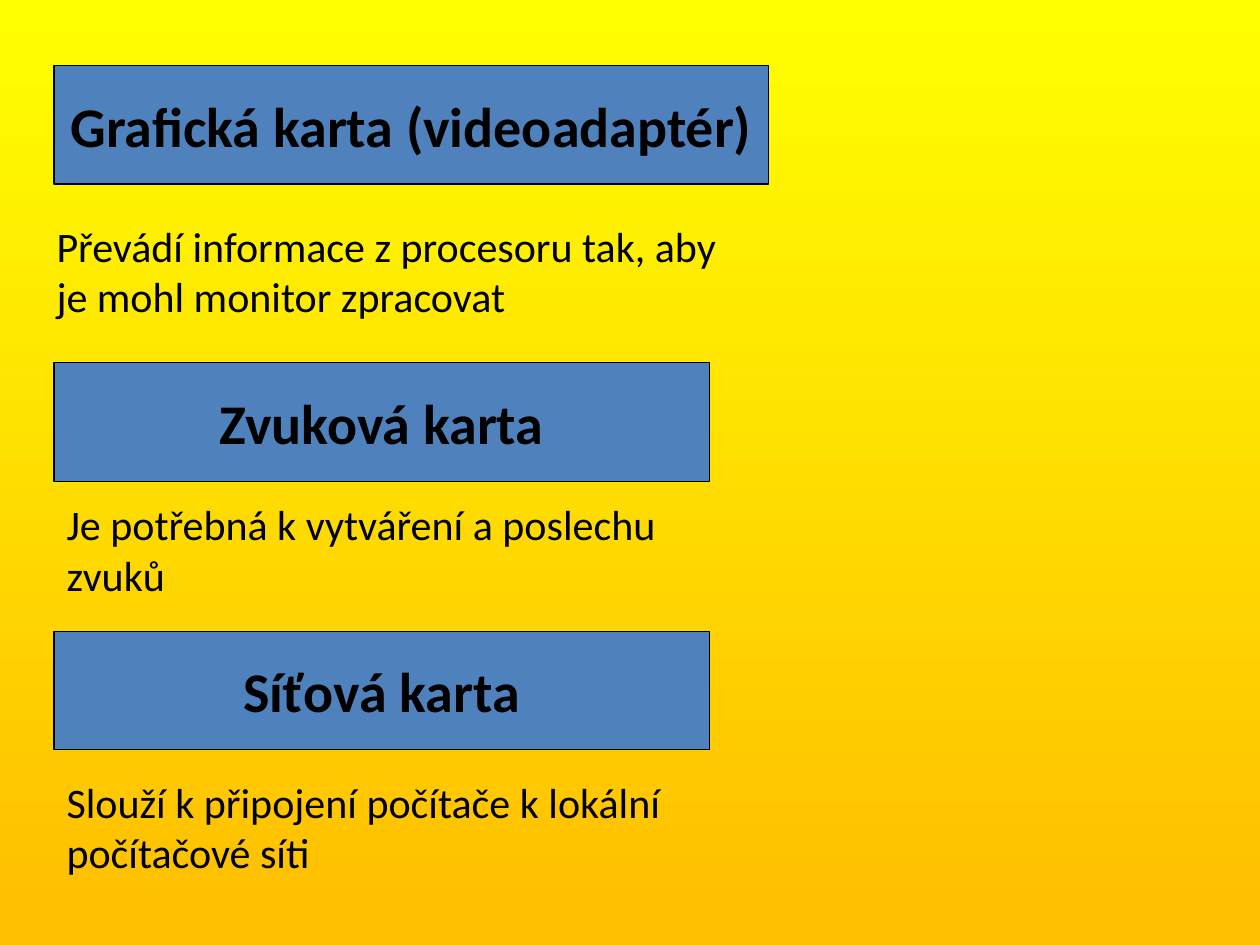
import pptx
import pptx.dml.color
import pptx.enum.shapes
import pptx.enum.text
import pptx.util

Inches = pptx.util.Inches
Pt = pptx.util.Pt
Color = pptx.dml.color.RGBColor.from_string

THEME = {
    "font": "Calibri",
    "text": "000000",
    "card": "4F81BD",
    "gradient": [(0, "FFFF00"), (0.97, "FFC000")],
    "heading_size": 32,
    "body_size": 24,
    "line_width": 0.75,
}

LEFT = 0.43
HEADING_HEIGHT = 0.94
BODY_HEIGHT = 0.91

CARDS = [
    {
        "heading": "Grafická karta (videoadaptér)",
        "heading_top": 0.52,
        "heading_width": 5.67,
        "body": "Převádí informace z procesoru tak, aby je mohl monitor zpracovat",
        "body_box": (0.35, 1.7, 5.59),
    },
    {
        "heading": "Zvuková karta",
        "heading_top": 2.88,
        "heading_width": 5.2,
        "body": "Je potřebná k vytváření a poslechu zvuků",
        "body_box": (LEFT, 3.91, 5.28),
    },
    {
        "heading": "Síťová karta",
        "heading_top": 5.01,
        "heading_width": 5.2,
        "body": "Slouží k připojení počítače k lokální počítačové síti",
        "body_box": (LEFT, 6.11, 5.67),
    },
]


def paint_background(page):
    fill = page.background.fill
    fill.gradient()
    fill.gradient_angle = 270
    for stop, (position, color) in zip(fill.gradient_stops, THEME["gradient"]):
        stop.position = position
        stop.color.rgb = Color(color)


def write(box, text, size, bold, alignment):
    para = box.text_frame.paragraphs[0]
    para.text = text
    para.alignment = alignment
    para.font.name = THEME["font"]
    para.font.size = Pt(size)
    para.font.bold = bold
    para.font.color.rgb = Color(THEME["text"])


def add_heading(page, card):
    box = page.shapes.add_shape(
        pptx.enum.shapes.MSO_SHAPE.RECTANGLE,
        Inches(LEFT), Inches(card["heading_top"]),
        Inches(card["heading_width"]), Inches(HEADING_HEIGHT),
    )
    box.shadow.inherit = False
    box.fill.solid()
    box.fill.fore_color.rgb = Color(THEME["card"])
    box.line.color.rgb = Color(THEME["text"])
    box.line.width = Pt(THEME["line_width"])
    box.text_frame.word_wrap = False
    box.text_frame.vertical_anchor = pptx.enum.text.MSO_ANCHOR.MIDDLE
    write(box, card["heading"], THEME["heading_size"], True,
          pptx.enum.text.PP_ALIGN.CENTER)


def add_body(page, card):
    left, top, width = card["body_box"]
    box = page.shapes.add_textbox(
        Inches(left), Inches(top), Inches(width), Inches(BODY_HEIGHT)
    )
    box.text_frame.word_wrap = True
    box.text_frame.auto_size = pptx.enum.text.MSO_AUTO_SIZE.SHAPE_TO_FIT_TEXT
    write(box, card["body"], THEME["body_size"], False,
          pptx.enum.text.PP_ALIGN.LEFT)


def main():
    deck = pptx.Presentation()
    deck.slide_width = Inches(10)
    deck.slide_height = Inches(7.5)
    page = deck.slides.add_slide(deck.slide_layouts[6])
    paint_background(page)
    for card in CARDS:
        add_heading(page, card)
        add_body(page, card)
    deck.save("out.pptx")


if __name__ == "__main__":
    main()
